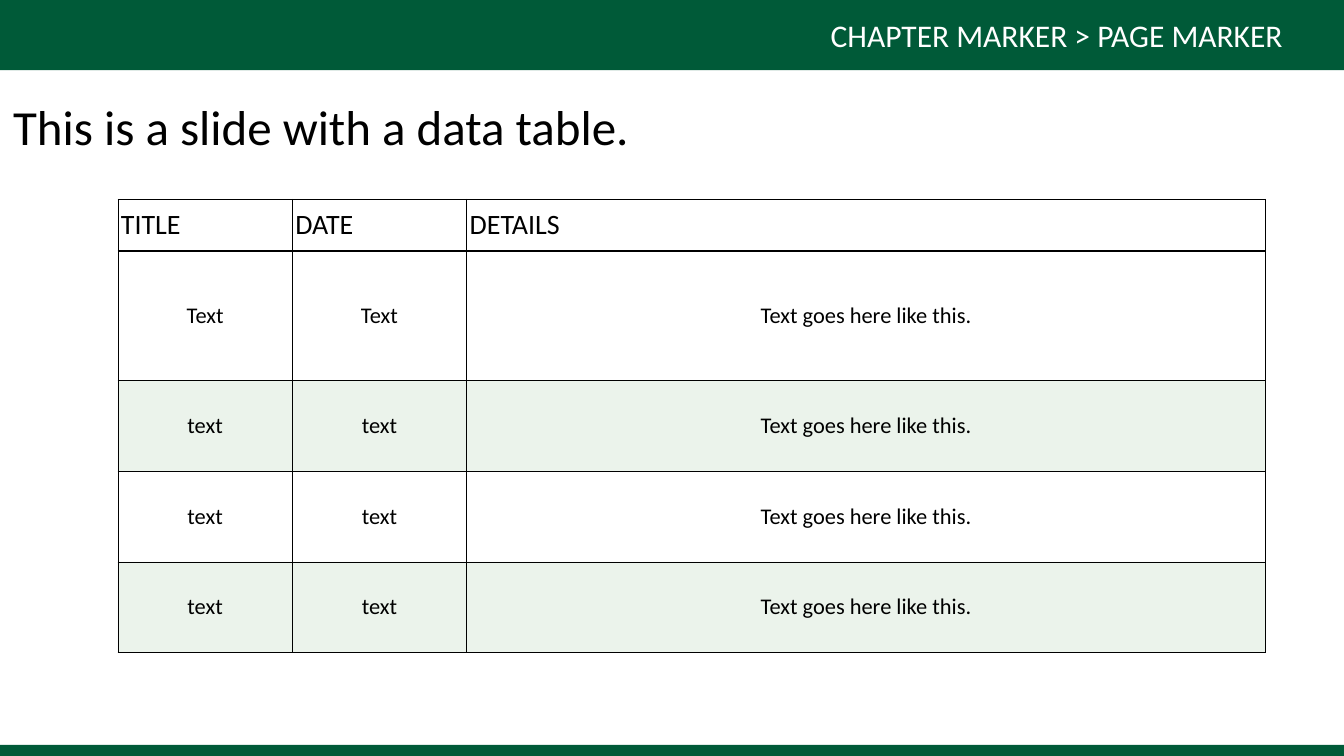
from lxml.etree import SubElement
from pptx import Presentation
from pptx.dml.color import RGBColor
from pptx.enum.shapes import MSO_SHAPE
from pptx.enum.text import MSO_ANCHOR, MSO_AUTO_SIZE, PP_ALIGN
from pptx.oxml.ns import qn
from pptx.util import Inches, Pt

COLORS = {"green": "005A38", "band": "027001", "ink": "000000", "paper": "FFFFFF"}
FONT = "Calibri"
INSET = Inches(0.06)
BAND_ALPHA = 8
BAR_WIDTH, BAR_HEIGHT = 29.88, 1.39
COLUMN_WIDTHS = [3.46, 3.46, 15.85]
ROW_HEIGHTS = [1.03, 2.57, 1.8, 1.8, 1.8]
DETAIL = "Text goes here like this."
ROWS = [["TITLE", "DATE", "DETAILS"], ["Text", "Text", DETAIL]] + [["text", "text", DETAIL]] * 3


def color(name):
    return RGBColor.from_string(COLORS[name])


def set_attributes(target, values):
    for name, value in values.items():
        setattr(target, name, value)


def margins():
    sides = ("left", "top", "right", "bottom")
    return {f"margin_{side}": INSET for side in sides}


def write_text(frame, text, size, ink="ink", align=PP_ALIGN.LEFT):
    para = frame.paragraphs[0]
    para.alignment = align
    span = para.add_run()
    span.text = text
    set_attributes(span.font, {"name": FONT, "size": Pt(size), "bold": False})
    span.font.color.rgb = color(ink)


def add_bar(page, left, top):
    bar = page.shapes.add_shape(
        MSO_SHAPE.RECTANGLE, Inches(left), Inches(top), Inches(BAR_WIDTH), Inches(BAR_HEIGHT)
    )
    bar.shadow.inherit = False
    bar.fill.solid()
    bar.fill.fore_color.rgb = color("green")
    bar.line.fill.background()


def place_text(box, area, text, size, **style):
    set_attributes(box, dict(zip(("left", "top", "width", "height"), map(Inches, area))))
    frame = box.text_frame
    set_attributes(frame, {
        "word_wrap": False,
        "auto_size": MSO_AUTO_SIZE.SHAPE_TO_FIT_TEXT,
        "vertical_anchor": MSO_ANCHOR.MIDDLE,
        **margins(),
    })
    write_text(frame, text, size, **style)


def set_borders(cell, widths):
    properties = cell._tc.get_or_add_tcPr()
    for side, width in widths.items():
        line = SubElement(properties, qn(f"a:ln{side}"), w=str(Pt(width)))
        fill = SubElement(line, qn("a:solidFill"))
        SubElement(fill, qn("a:srgbClr"), val=COLORS["ink"])


def fill_band(cell):
    cell.fill.solid()
    cell.fill.fore_color.rgb = color("band")
    tint = cell._tc.tcPr.find(f"{qn('a:solidFill')}/{qn('a:srgbClr')}")
    SubElement(tint, qn("a:alpha"), val=str(BAND_ALPHA * 1000))


def format_cell(cell, text, row):
    header = row == 0
    set_attributes(cell, {"vertical_anchor": MSO_ANCHOR.MIDDLE, **margins()})
    set_borders(cell, {"L": 1, "R": 1, "T": 3 if row == 1 else 1, "B": 3 if header else 1})
    if row and row % 2 == 0:
        fill_band(cell)
    else:
        cell.fill.background()
    align = PP_ALIGN.LEFT if header else PP_ALIGN.CENTER
    write_text(cell.text_frame, text, 40 if header else 32, align=align)


def add_data_table(page, left, top):
    table = page.shapes.add_table(
        len(ROWS), len(COLUMN_WIDTHS), Inches(left), Inches(top),
        Inches(sum(COLUMN_WIDTHS)), Inches(sum(ROW_HEIGHTS)),
    ).table
    set_attributes(table, {"first_row": False, "horz_banding": False})
    for column, width in zip(table.columns, COLUMN_WIDTHS):
        column.width = Inches(width)
    for row, height in enumerate(ROW_HEIGHTS):
        table.rows[row].height = Inches(height)
        for column, text in enumerate(ROWS[row]):
            format_cell(table.cell(row, column), text, row)


def main():
    deck = Presentation()
    set_attributes(deck, {"slide_width": Inches(26.67), "slide_height": Inches(15)})
    page = deck.slides.add_slide(deck.slide_layouts[5])
    add_bar(page, -0.56, 0)
    add_bar(page, -0.75, 14.78)
    marker = page.shapes.add_textbox(0, 0, 0, 0)
    place_text(marker, (15.6, 0.26, 10.74, 0.86), "CHAPTER MARKER > PAGE MARKER", 45,
               ink="paper", align=PP_ALIGN.CENTER)
    place_text(page.shapes.title, (0.2, 1.86, 15.07, 1.29),
               "This is a slide with a data table.", 70)
    add_data_table(page, 2.34, 3.95)
    deck.save("out.pptx")


if __name__ == "__main__":
    main()
